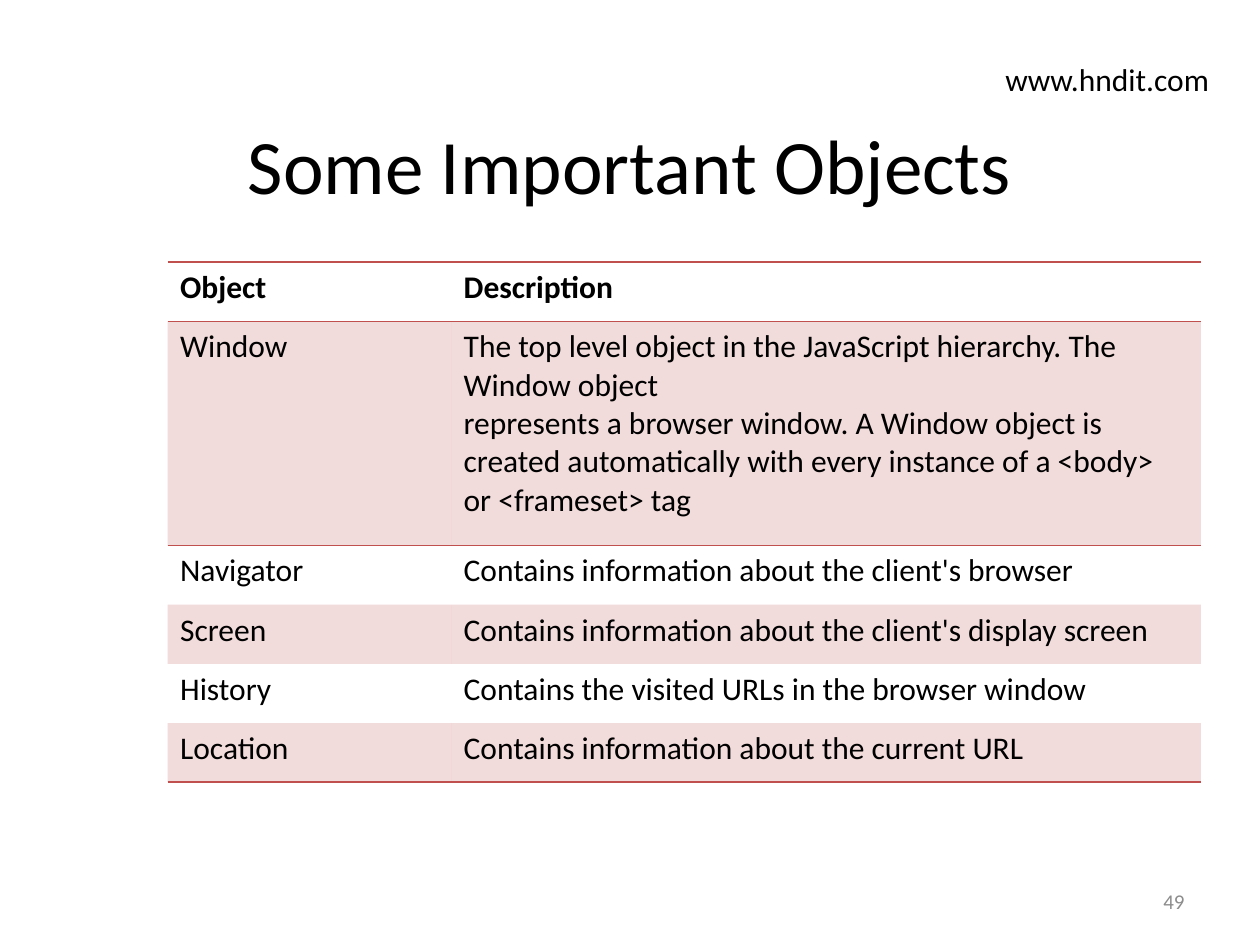
from lxml import etree
from pptx import Presentation
from pptx.dml.color import RGBColor
from pptx.enum.text import MSO_ANCHOR, PP_ALIGN
from pptx.oxml.ns import qn
from pptx.util import Inches, Pt

LEFT, CENTER, RIGHT = PP_ALIGN.LEFT, PP_ALIGN.CENTER, PP_ALIGN.RIGHT
TOP, MIDDLE = MSO_ANCHOR.TOP, MSO_ANCHOR.MIDDLE
BLACK = RGBColor(0x00, 0x00, 0x00)
GRAY = RGBColor(0x8C, 0x8C, 0x8C)
RED = RGBColor(0xC0, 0x50, 0x4D)
PLAIN = "{2D5ABB26-0587-4C30-8999-92F81FD0307C}"  # table style: no grid

ROWS = [
    ("Object", ["Description"]),
    ("Window", [
        "The top level object in the JavaScript hierarchy. The Window object",
        "represents a browser window. A Window object is created automatically "
        "with every instance of a <body> or <frameset> tag",
    ]),
    ("Navigator", ["Contains information about the client's browser"]),
    ("Screen", ["Contains information about the client's display screen"]),
    ("History", ["Contains the visited URLs in the browser window"]),
    ("Location", ["Contains information about the current URL"]),
]
WIDTHS = [2.25, 5.95]
HEIGHTS = [0.47, 1.78] + [0.47] * 4


class Page:
    font = "Calibri"
    size = 18

    def __init__(self, slide):
        self.slide = slide

    def put(self, frame, lines, size=size, color=BLACK, bold=False, align=LEFT):
        """Set lines as the paragraphs of a text frame."""
        for i, line in enumerate(lines):
            para = frame.add_paragraph() if i else frame.paragraphs[0]
            para.alignment = align
            run = para.add_run()
            run.text = line
            run.font.name = self.font
            run.font.size = Pt(size)
            run.font.bold = bold
            run.font.color.rgb = color

    def text(self, place, line, anchor=TOP, wrap=True, **style):
        box = self.slide.shapes.add_textbox(*map(Inches, place))
        frame = box.text_frame
        frame.word_wrap = wrap
        frame.vertical_anchor = anchor
        self.put(frame, [line], **style)

    def tint(self, cell):
        """Fill a cell with red at 20 % opacity."""
        cell.fill.solid()
        cell.fill.fore_color.rgb = RED
        color = cell._tc.tcPr.find(".//" + qn("a:srgbClr"))
        etree.SubElement(color, qn("a:alpha"), val="20000")

    def rule(self, cell, sides):
        """Draw red 1 pt lines; sides are in schema order, ahead of the fill."""
        for i, side in enumerate(sides):
            line = etree.Element(qn("a:ln" + side), w=str(Pt(1)))
            solid = etree.SubElement(line, qn("a:solidFill"))
            etree.SubElement(solid, qn("a:srgbClr"), val=str(RED))
            cell._tc.get_or_add_tcPr().insert(i, line)

    def table(self, left, top, rows, widths, heights):
        place = map(Inches, (left, top, sum(widths), sum(heights)))
        shape = self.slide.shapes.add_table(len(rows), len(widths), *place)
        table = shape.table
        table.first_row = table.horz_banding = False
        table._tbl.tblPr.find(qn("a:tableStyleId")).text = PLAIN
        for col, width in zip(table.columns, widths):
            col.width = Inches(width)
        last = len(rows) - 1
        for r, (name, about) in enumerate(rows):
            table.rows[r].height = Inches(heights[r])
            for c, lines in enumerate(([name], about)):
                cell = table.cell(r, c)
                self.put(cell.text_frame, lines, bold=r == 0)
                if r % 2:
                    self.tint(cell)
                else:
                    cell.fill.background()
                self.rule(cell, {0: "TB", 1: "T", last: "B"}.get(r, ""))


def main():
    deck = Presentation()
    deck.slide_width, deck.slide_height = Inches(10), Inches(7.5)
    page = Page(deck.slides.add_slide(deck.slide_layouts[6]))
    page.text((0.5, 0.67, 9, 1.25), "Some Important Objects", MIDDLE,
              size=44, align=CENTER)
    page.table(1.33, 2.08, ROWS, WIDTHS, HEIGHTS)
    page.text((7.17, 6.95, 2.33, 0.4), "49", MIDDLE,
              size=12, color=GRAY, align=RIGHT)
    page.text((7.88, 0.43, 1.82, 0.4), "www.hndit.com", wrap=False)
    deck.save("out.pptx")


if __name__ == "__main__":
    main()
